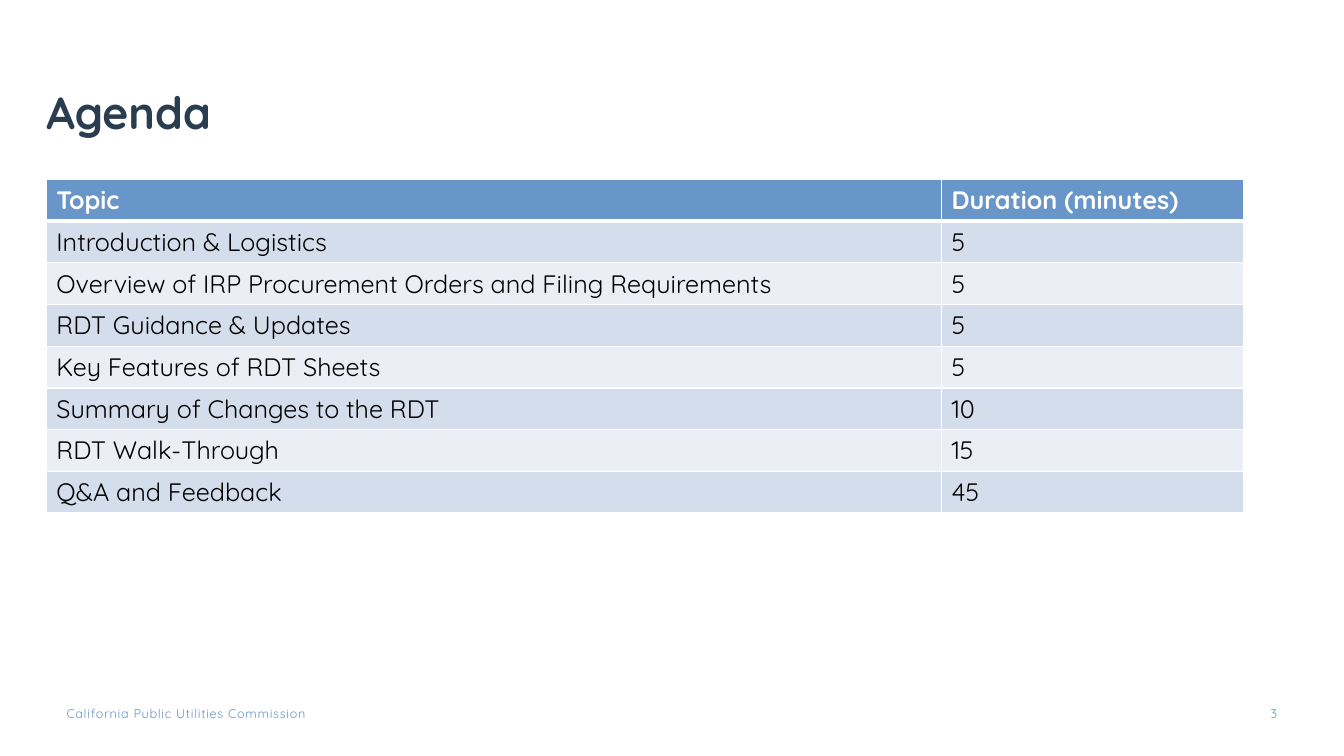
from lxml import etree
from pptx import Presentation
from pptx.dml.color import RGBColor
from pptx.enum.text import MSO_ANCHOR, MSO_AUTO_SIZE, PP_ALIGN
from pptx.oxml.ns import qn
from pptx.util import Pt

# Content
TITLE = "Agenda"
AGENDA = [
    ("Topic", "Duration (minutes)"),
    ("Introduction & Logistics", "5"),
    ("Overview of IRP Procurement Orders and Filing Requirements", "5"),
    ("RDT Guidance & Updates", "5"),
    ("Key Features of RDT Sheets", "5"),
    ("Summary of Changes to the RDT", "10"),
    ("RDT Walk-Through", "15"),
    ("Q&A and Feedback", "45"),
]
FOOTER = "California Public Utilities Commission"
PAGE = "3"

# Style
FONT = "Quicksand"
NAVY = RGBColor(0x2A, 0x3C, 0x50)
BLUE = RGBColor(0x69, 0x96, 0xC9)
BAND_DARK = RGBColor(0xD4, 0xDD, 0xEB)
BAND_LIGHT = RGBColor(0xEB, 0xEF, 0xF5)
WHITE = RGBColor(0xFF, 0xFF, 0xFF)
BLACK = RGBColor(0, 0, 0)
LEFT, RIGHT = PP_ALIGN.LEFT, PP_ALIGN.RIGHT
BOTTOM, TOP = MSO_ANCHOR.BOTTOM, MSO_ANCHOR.TOP
NO_FIT = MSO_AUTO_SIZE.NONE

# Layout in points
MARGIN = 33.12
TABLE_TOP = 128.16
ROW_HEIGHT = 29.7
COLUMNS = (639.36, 216)
FOOTER_TOP = 504


def write(tf, text, size, color, bold=False, align=LEFT, spacing=None):
    p = tf.paragraphs[0]
    p.alignment = align
    r = p.add_run()
    r.text = text
    r.font.name = FONT
    r.font.size = Pt(size)
    r.font.bold = bold
    r.font.color.rgb = color
    if spacing:
        r.font._element.set("spc", str(int(spacing * 100)))
    return p


def set_frame(tf, anchor, insets):
    tf.word_wrap = True
    tf.auto_size = NO_FIT
    tf.vertical_anchor = anchor
    tf.margin_left, tf.margin_top, tf.margin_right, tf.margin_bottom = map(Pt, insets)


def add_border(cell, side, width):
    ln = etree.SubElement(cell._tc.get_or_add_tcPr(), qn(f"a:ln{side}"), w=str(Pt(width)))
    fill = etree.SubElement(ln, qn("a:solidFill"))
    etree.SubElement(fill, qn("a:srgbClr"), val=str(WHITE))


prs = Presentation()
prs.slide_width, prs.slide_height = Pt(960), Pt(540)
s = prs.slides.add_slide(prs.slide_layouts[5])

# Title
title = s.shapes.title
title.left, title.top, title.width, title.height = Pt(MARGIN), Pt(-1.44), Pt(864), Pt(104.4)
set_frame(title.text_frame, BOTTOM, (0, 3.6, 7.2, 3.6))
write(title.text_frame, TITLE, 32, NAVY, bold=True).line_spacing = 0.9

# Agenda table
table = s.shapes.add_table(
    len(AGENDA), len(COLUMNS), Pt(MARGIN), Pt(TABLE_TOP),
    Pt(sum(COLUMNS)), Pt(ROW_HEIGHT * len(AGENDA))).table
for column, width in zip(table.columns, COLUMNS):
    column.width = Pt(width)
for i, values in enumerate(AGENDA):
    header = i == 0
    table.rows[i].height = Pt(ROW_HEIGHT)
    for j, value in enumerate(values):
        cell = table.cell(i, j)
        for side in "LRTB":
            under_header = (i, side) in ((0, "B"), (1, "T"))
            add_border(cell, side, 3 if under_header else 1)
        cell.fill.solid()
        cell.fill.fore_color.rgb = BLUE if header else BAND_DARK if i % 2 else BAND_LIGHT
        write(cell.text_frame, value, 18, WHITE if header else BLACK, bold=header)

# Footer and page number
for text, left, width, height, align, spacing in (
        (FOOTER, 47.52, 231.12, 10.8, LEFT, 0.5),
        (PAGE, 882, 30.24, 14.4, RIGHT, None)):
    tf = s.shapes.add_textbox(Pt(left), Pt(FOOTER_TOP), Pt(width), Pt(height)).text_frame
    set_frame(tf, TOP, (0, 0, 0, 0))
    write(tf, text, 9, BLUE, align=align, spacing=spacing)

prs.save("out.pptx")
